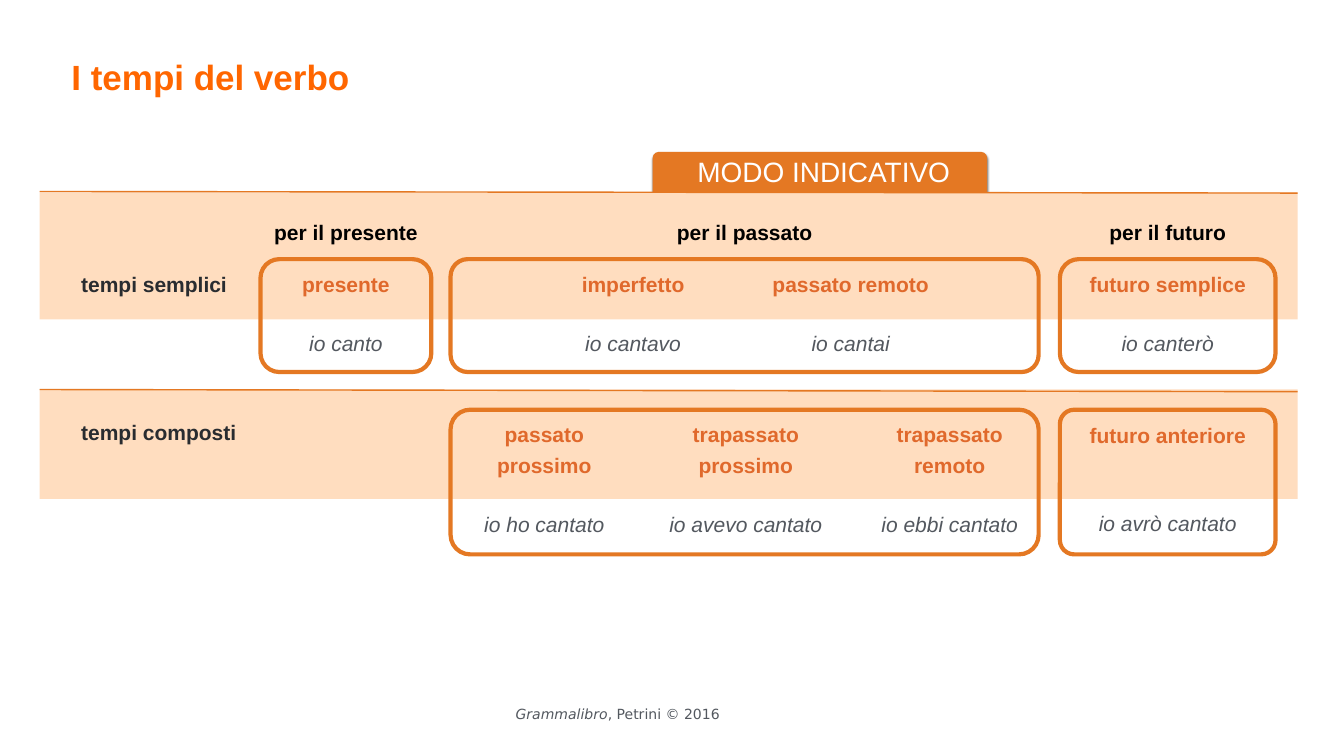
from dataclasses import dataclass

from lxml import etree
from pptx import Presentation
from pptx.dml.color import RGBColor
from pptx.enum import shapes, text
from pptx.oxml import parse_xml
from pptx.oxml.ns import nsdecls, qn
from pptx.util import Cm, Pt


@dataclass(frozen=True)
class Theme:
    font: str = "Arial"
    footer_font: str = "DejaVu Sans"
    title: str = "FF6600"
    orange: str = "E47823"
    band: str = "FFDDBF"
    tense: str = "E0692C"
    example: str = "53585F"
    label: str = "292C30"
    black: str = "000000"
    white: str = "FFFFFF"
    title_size: int = 50
    tab_size: int = 40
    body_size: int = 30
    footer_size: int = 20
    inset: float = 0.15
    spacing: float = 1.2


THEME = Theme()
BLANK_LINE = 41.4  # points taken by one line of body text

# left and width of each column, in cm
PRESENT, PAST, FUTURE = (13.13, 8.61), (22.71, 29.64), (53.42, 10.87)
HEADINGS = [("per il presente", PRESENT), ("per il passato", PAST), ("per il futuro", FUTURE)]


@dataclass(frozen=True)
class TenseRow:
    label: str
    label_top: float
    band: tuple  # top, height
    rule: tuple  # start y, end y
    frame: tuple  # top, height
    cells_box: tuple  # top, height
    frames: list  # column, corner radius
    cells: list  # (left, width), tense lines, example
    name_lines: int  # lines kept for the tense name


SIMPLE = TenseRow(
    "tempi semplici", 13.28, (9.7, 6.4), (9.65, 9.73), (13.06, 5.69), (13.26, 4.85),
    [(PRESENT, 0.167), (PAST, 0.152), (FUTURE, 0.167)],
    [(PRESENT, ["presente"], "io canto"),
     ((26.87, 10.08), ["imperfetto"], "io cantavo"),
     ((36.98, 11.79), ["passato remoto"], "io cantai"),
     (FUTURE, ["futuro semplice"], "io canterò")],
    1)
COMPOUND = TenseRow(
    "tempi composti", 20.75, (19.63, 5.51), (19.63, 19.74), (20.65, 7.29), (20.83, 6.4),
    [(PAST, 0.135), (FUTURE, 0.099)],
    [((22.71, 9.45), ["passato", "prossimo"], "io ho cantato"),
     ((32.89, 9.4), ["trapassato", "prossimo"], "io avevo cantato"),
     ((43.66, 8.41), ["trapassato", "remoto"], "io ebbi cantato"),
     (FUTURE, ["futuro anteriore"], "io avrò cantato")],
    2)


def rgb(color):
    return RGBColor.from_string(color)


def style_run(r, color, size=THEME.body_size, bold=False, italic=False, font=THEME.font):
    r.font.name, r.font.size = font, Pt(size)
    r.font.bold, r.font.italic = bold, italic
    r.font.color.rgb = rgb(color)


def set_frame(tf, inset=THEME.inset, anchor=text.MSO_ANCHOR.MIDDLE):
    tf.word_wrap = True
    tf.auto_size = text.MSO_AUTO_SIZE.NONE
    tf.vertical_anchor = anchor
    tf.margin_left = tf.margin_right = tf.margin_top = tf.margin_bottom = Cm(inset)


def add_text(s, left, top, width, height, lines, align=text.PP_ALIGN.CENTER,
             spacing=THEME.spacing, **style):
    """Add a text box with one equally styled paragraph per line."""
    tf = s.shapes.add_textbox(Cm(left), Cm(top), Cm(width), Cm(height)).text_frame
    set_frame(tf)
    tf.text = "\n".join(lines)
    for p in tf.paragraphs:
        p.alignment, p.line_spacing = align, spacing
        for r in p.runs:
            style_run(r, **style)
    return tf


def add_box(s, kind, left, top, width, height, fill=None, radius=None):
    """Add a filled shape, or an orange outline when no fill is given."""
    sp = s.shapes.add_shape(kind, Cm(left), Cm(top), Cm(width), Cm(height))
    sp.shadow.inherit = False
    if fill:
        sp.fill.solid()
        sp.fill.fore_color.rgb = rgb(fill)
        sp.line.fill.background()
    else:
        sp.fill.background()
        sp.line.color.rgb = rgb(THEME.orange)
        sp.line.width = Pt(6)
    if radius:
        sp.adjustments[0] = radius
    return sp


def add_rule(s, start_y, end_y):
    line = s.shapes.add_connector(shapes.MSO_CONNECTOR.STRAIGHT,
                                  Cm(2), Cm(start_y), Cm(65.4), Cm(end_y))
    line.line.color.rgb = rgb(THEME.orange)
    line.line.width = Pt(2)
    etree.SubElement(line._element.spPr, qn("a:effectLst"))


def add_title(s, title):
    sp = s.shapes.title
    sp.left, sp.top, sp.width, sp.height = Cm(3.45), Cm(2.46), Cm(26.06), Cm(2.59)
    set_frame(sp.text_frame)
    sp.text_frame.text = title
    p = sp.text_frame.paragraphs[0]
    p.alignment, p.line_spacing = text.PP_ALIGN.LEFT, 1.1
    style_run(p.runs[0], THEME.title, THEME.title_size, bold=True)


def add_tab(s, caption):
    """Add the shadowed tab whose lower part lies behind the first band."""
    tab = add_box(s, shapes.MSO_SHAPE.ROUNDED_RECTANGLE, 32.89, 7.65, 16.87, 3,
                  THEME.orange, 0.11)
    tab._element.spPr.find(qn("a:effectLst")).append(parse_xml(
        f'<a:outerShdw {nsdecls("a")} blurRad="{Pt(3)}" dist="{Pt(2)}" dir="5400000" '
        'rotWithShape="0"><a:srgbClr val="000000"><a:alpha val="50000"/></a:srgbClr>'
        '</a:outerShdw>'))
    add_band(s, SIMPLE)
    tf = add_text(s, 31.55, 7.49, 19.94, 2.11, [caption], spacing=1.1,
                  color=THEME.white, size=THEME.tab_size)
    set_frame(tf, 0.13, text.MSO_ANCHOR.TOP)


def add_band(s, row):
    top, height = row.band
    add_box(s, shapes.MSO_SHAPE.RECTANGLE, 2, top, 63.4, height, THEME.band)
    add_rule(s, *row.rule)


def add_tenses(s, row):
    add_text(s, 3.94, row.label_top, 9, 1.78, [row.label], text.PP_ALIGN.LEFT,
             color=THEME.label, bold=True)
    for (left, width), names, example in row.cells:
        top, height = row.cells_box
        tf = add_text(s, left, top, width, height, [*names, example],
                      color=THEME.tense, bold=True)
        p = tf.paragraphs[-1]
        p.space_before = Pt(BLANK_LINE * (1 + row.name_lines - len(names)))
        style_run(p.runs[0], THEME.example, italic=True)
    for (left, width), radius in row.frames:
        top, height = row.frame
        add_box(s, shapes.MSO_SHAPE.ROUNDED_RECTANGLE, left, top, width, height, radius=radius)


def add_footer(s, book, rights):
    style = dict(color=THEME.example, size=THEME.footer_size, font=THEME.footer_font)
    tf = add_text(s, 25.65, 35.64, 10.97, 0.91, [book], spacing=0.7, italic=True, **style)
    tf.word_wrap = False
    r = tf.paragraphs[0].add_run()
    r.text = rights
    style_run(r, **style)


def main():
    prs = Presentation()
    prs.slide_width, prs.slide_height = Cm(67.74), Cm(38.1)
    s = prs.slides.add_slide(prs.slide_layouts.get_by_name("Title Only"))
    add_title(s, "I tempi del verbo")
    add_tab(s, "MODO INDICATIVO")
    add_band(s, COMPOUND)
    for heading, (left, width) in HEADINGS:
        add_text(s, left, 10.67, width, 1.78, [heading], color=THEME.black, bold=True)
    for row in (SIMPLE, COMPOUND):
        add_tenses(s, row)
    add_footer(s, "Grammalibro", ", Petrini © 2016")
    prs.save("out.pptx")


if __name__ == "__main__":
    main()
